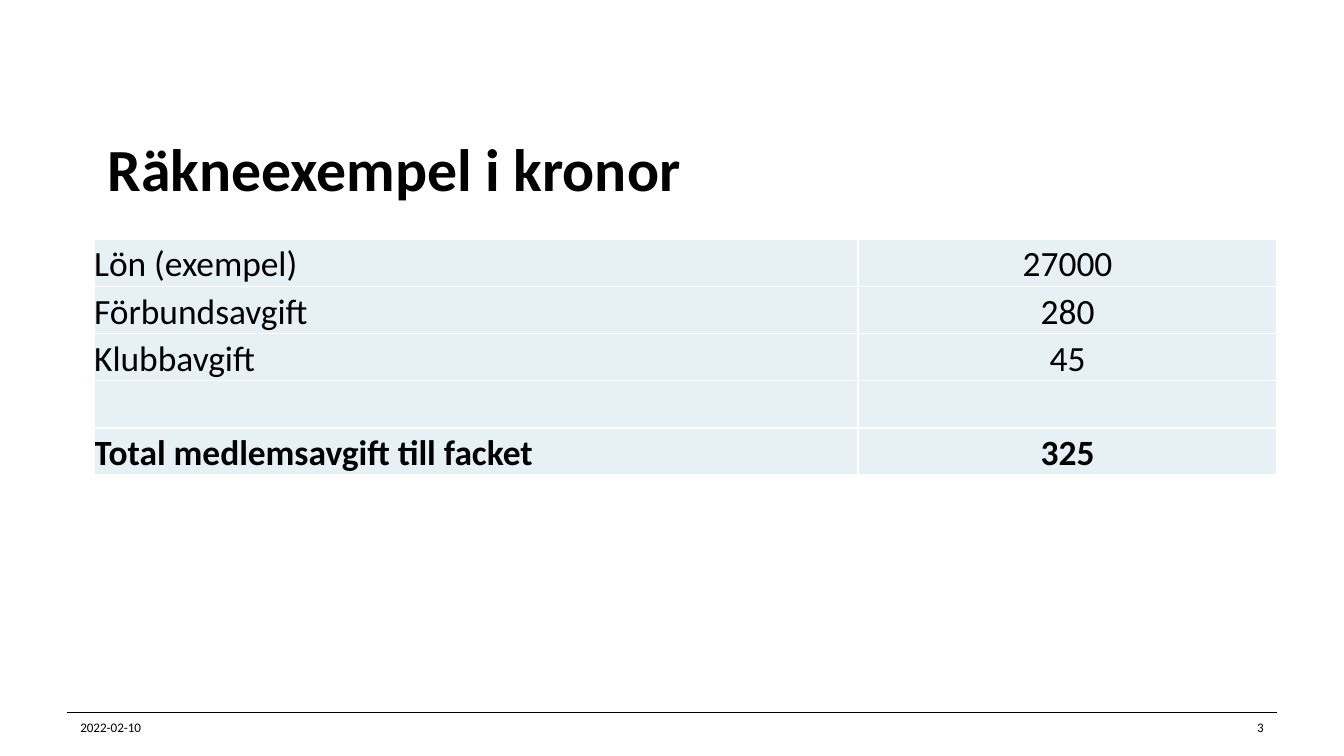
import pptx
import pptx.dml.color
import pptx.enum.shapes
import pptx.enum.text
import pptx.oxml
import pptx.oxml.ns
import pptx.util
from pptx.util import Cm

FONT = "Calibri"
COLORS = {"text": "000000", "cell": "E7F1F5", "border": "FFFFFF"}
ROWS = [
    ("Lön (exempel)", "27000"),
    ("Förbundsavgift", "280"),
    ("Klubbavgift", "45"),
    ("", ""),
    ("Total medlemsavgift till facket", "325"),
]
ALIGN = pptx.enum.text.PP_ALIGN
ANCHOR = pptx.enum.text.MSO_ANCHOR


def color(name):
    """Return the named colour as an RGB value."""
    return pptx.dml.color.RGBColor.from_string(COLORS[name])


def write(text_frame, text, size, bold=False, alignment=ALIGN.LEFT):
    """Put one formatted paragraph in a text frame and return it."""
    text_frame.text = text
    paragraph = text_frame.paragraphs[0]
    paragraph.alignment = alignment
    for run in paragraph.runs:
        run.font.name = FONT
        run.font.size = pptx.util.Pt(size)
        run.font.bold = bold
        run.font.color.rgb = color("text")
    return paragraph


def add_title(slide, text):
    """Place and format the slide title."""
    title = slide.shapes.title
    title.left, title.top, title.width, title.height = Cm(1.78), Cm(2.08), Cm(22.35), Cm(2.39)
    title.text_frame.vertical_anchor = ANCHOR.MIDDLE
    paragraph = write(title.text_frame, text, 32, bold=True)
    paragraph.line_spacing = pptx.util.Pt(32)


def add_footer_line(slide):
    """Draw the thin rule above the footer."""
    line = slide.shapes.add_connector(
        pptx.enum.shapes.MSO_CONNECTOR.STRAIGHT, Cm(1.27), Cm(13.46), Cm(24.13), Cm(13.46))
    line.line.color.rgb = color("text")
    line.line.width = pptx.util.Pt(0.25)
    properties = line._element.spPr
    properties.append(pptx.oxml.parse_xml(f"<a:effectLst {pptx.oxml.ns.nsdecls('a')}/>"))


def add_footer_text(slide, left, text, alignment):
    """Add a small text under the footer rule."""
    box = slide.shapes.add_textbox(Cm(left), Cm(13.46), Cm(2.42), Cm(0.56))
    box.text_frame.word_wrap = True
    box.text_frame.vertical_anchor = ANCHOR.MIDDLE
    write(box.text_frame, text, 7, alignment=alignment)


def add_borders(cell):
    """Give a cell one-point borders on all sides."""
    properties = cell._tc.get_or_add_tcPr()
    for side in ("lnL", "lnR", "lnT", "lnB"):
        properties.append(pptx.oxml.parse_xml(
            f'<a:{side} {pptx.oxml.ns.nsdecls("a")} w="12700"><a:solidFill>'
            f'<a:srgbClr val="{COLORS["border"]}"/></a:solidFill></a:{side}>'))


def format_cell(cell, text, bold, alignment):
    """Fill a table cell and set its text."""
    cell.margin_left = cell.margin_right = cell.margin_top = cell.margin_bottom = 0
    cell.vertical_anchor = ANCHOR.BOTTOM
    add_borders(cell)
    cell.fill.solid()
    cell.fill.fore_color.rgb = color("cell")
    write(cell.text_frame, text, 19, bold, alignment)


def add_fee_table(slide):
    """Add the table of fees with a bold total row."""
    frame = slide.shapes.add_table(len(ROWS), 2, Cm(1.78), Cm(4.52), Cm(22.35), Cm(4.45))
    table = frame.table
    table.first_row = table.horz_banding = False
    table.columns[0].width, table.columns[1].width = Cm(14.44), Cm(7.91)
    for row_index, values in enumerate(ROWS):
        table.rows[row_index].height = Cm(0.89)
        is_total = row_index == len(ROWS) - 1
        for column_index, alignment in enumerate((ALIGN.LEFT, ALIGN.CENTER)):
            cell = table.cell(row_index, column_index)
            format_cell(cell, values[column_index], is_total, alignment)


def main():
    """Build and save the slide."""
    presentation = pptx.Presentation()
    presentation.slide_width, presentation.slide_height = Cm(25.4), Cm(14.28)
    slide = presentation.slides.add_slide(presentation.slide_layouts[5])
    add_footer_line(slide)
    add_title(slide, "Räkneexempel i kronor")
    add_footer_text(slide, 1.27, "2022-02-10", ALIGN.LEFT)
    add_footer_text(slide, 21.71, "3", ALIGN.RIGHT)
    add_fee_table(slide)
    presentation.save("out.pptx")


if __name__ == "__main__":
    main()
